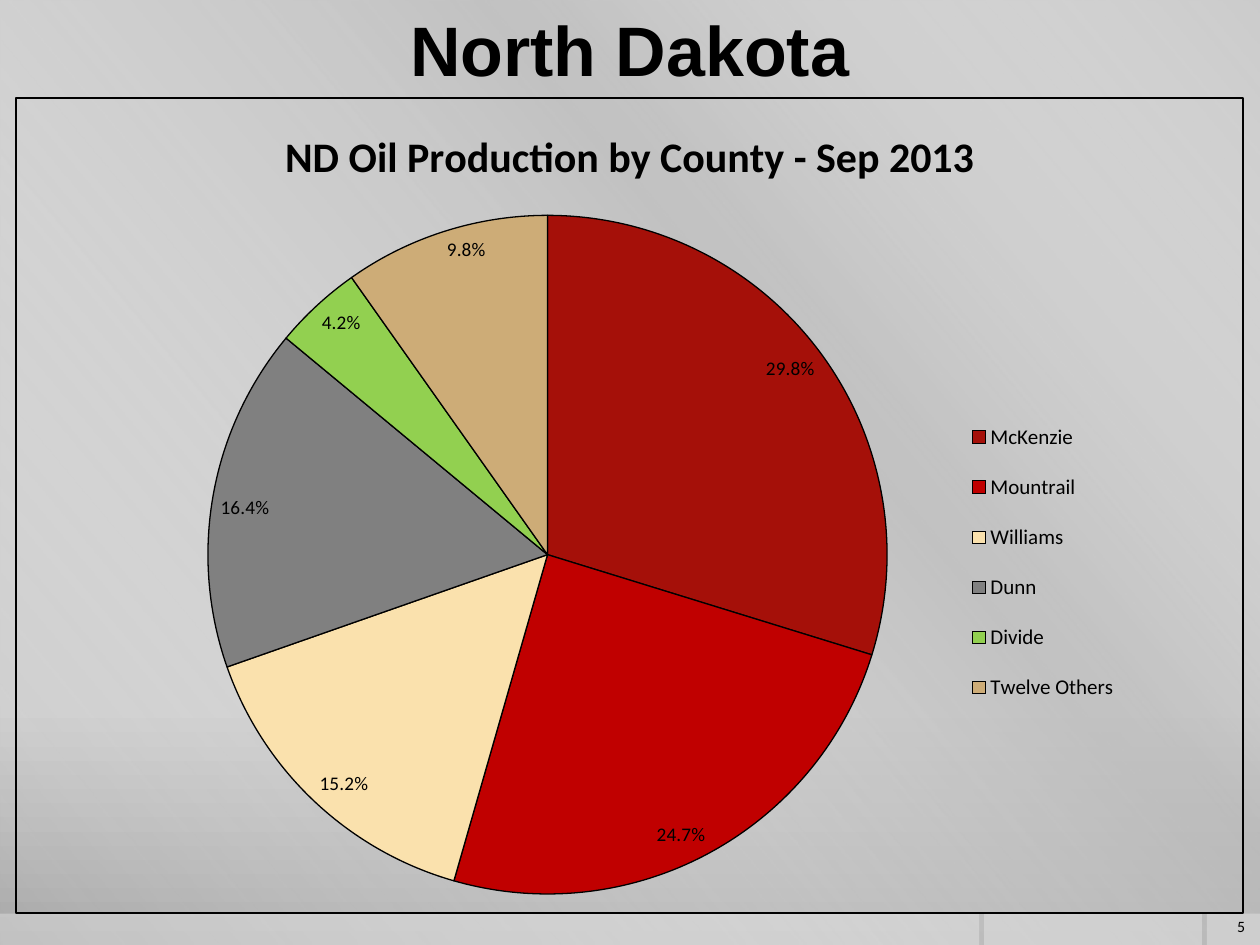
from lxml import etree
from pptx import Presentation
from pptx import util as u
from pptx.chart.data import CategoryChartData
from pptx.dml.color import RGBColor
from pptx.enum import chart as ch, shapes, text
from pptx.oxml import parse_xml
from pptx.oxml.ns import nsdecls, qn

HEAD = "North Dakota"
TITLE = "ND Oil Production by County - Sep 2013"
PAGE = "5"
COUNTIES = [  # name, share, colour
    ("McKenzie", 0.298, "A51009"),
    ("Mountrail", 0.247, "C00000"),
    ("Williams", 0.152, "FAE1AD"),
    ("Dunn", 0.164, "808080"),
    ("Divide", 0.042, "92D050"),
    ("Twelve Others", 0.098, "CDAC77"),
]
THEME = {
    "ink": "000000", "bar": "FFFFFF", "head": "Arial", "body": "Calibri",
    "sizes": {"head": 40, "title": 24, "legend": 12, "label": 11, "page": 9},
    # position, colour, opacity (all in percent)
    "back": (90, [(0, "CBCBCB", 100), (76, "C8C8C8", 100), (100, "A7A7A7", 100)]),
    "sheen": (140, [(0, "FFFFFF", 0), (34, "BFBFBF", 61),
                    (38, "BFBFBF", 76), (100, "FFFFFF", 0)]),
}
WIDE, HIGH = 25.4, 19.05
BAR_TOP = 18.42
BARS = [(0, 19.74), (19.84, 4.39), (24.33, 1.07)]  # left, width
PLOT = (0.156, 0.144, 0.554, 0.833)  # shares of the chart frame
LEGEND = (0.767, 0.37, 0.14, 0.4)


def rgb(code):
    return RGBColor.from_string(code)


def box(*sides):
    return [u.Cm(side) for side in sides]


def style(font, kind, bold=False):
    font.name = THEME["head" if kind == "head" else "body"]
    font.size = u.Pt(THEME["sizes"][kind])
    font.bold = bold
    font.color.rgb = rgb(THEME["ink"])


def blend(props, angle, stops):
    """Swap the solid fill in props for a gradient with opacity."""
    marks = "".join(
        f'<a:gs pos="{at * 1000}"><a:srgbClr val="{code}">'
        f'<a:alpha val="{seen * 1000}"/></a:srgbClr></a:gs>'
        for at, code, seen in stops)
    grad = parse_xml(f'<a:gradFill {nsdecls("a")} rotWithShape="1"><a:gsLst>{marks}'
                     f'</a:gsLst><a:lin ang="{angle * 60000}" scaled="0"/></a:gradFill>')
    props.replace(props.find(qn("a:solidFill")), grad)


def panel(slide, *sides):
    shape = slide.shapes.add_shape(shapes.MSO_SHAPE.RECTANGLE, *box(*sides))
    shape.shadow.inherit = False
    shape.line.fill.background()
    shape.fill.solid()
    shape.fill.fore_color.rgb = rgb(THEME["bar"])
    return shape


def write(shape, words, kind, align, bold=False):
    frame = shape.text_frame
    frame.text = words
    frame.vertical_anchor = text.MSO_ANCHOR.MIDDLE
    para = frame.paragraphs[0]
    para.alignment = align
    style(para.font, kind, bold)
    return frame


def place(holder, sides, inner=False):
    """Give a chart part a fixed place within the chart frame."""
    old = holder.find(qn("c:layout"))
    if old is not None:
        holder.remove(old)
    target = '<c:layoutTarget val="inner"/>' if inner else ""
    modes = '<c:xMode val="edge"/><c:yMode val="edge"/>'
    parts = "".join(f'<c:{k} val="{v}"/>' for k, v in zip("xywh", sides))
    layout = parse_xml(f'<c:layout {nsdecls("c")}><c:manualLayout>{target}{modes}'
                       f'{parts}</c:manualLayout></c:layout>')
    before = holder.find(qn("c:legendPos"))
    if before is None:
        holder.insert(0, layout)
    else:
        before.addnext(layout)


def backdrop(slide):
    fill = slide.background.fill
    fill.solid()
    fill.fore_color.rgb = rgb(THEME["bar"])
    blend(slide.element.find(".//" + qn("p:bgPr")), *THEME["back"])
    sheen = panel(slide, 0, 0, WIDE, HIGH)
    blend(sheen.element.spPr, *THEME["sheen"])
    for left, width in BARS:
        bar = panel(slide, left, BAR_TOP, width, HIGH - BAR_TOP)
        tint = bar.element.spPr.find(".//" + qn("a:srgbClr"))
        etree.SubElement(tint, qn("a:alpha"), val="30000")


def pie(slide):
    data = CategoryChartData(number_format="0.0%")
    data.categories = [name for name, _, _ in COUNTIES]
    data.add_series(TITLE, [share for _, share, _ in COUNTIES])
    chart = slide.shapes.add_chart(
        ch.XL_CHART_TYPE.PIE, *box(0.31, 1.96, 24.77, 16.46), data).chart
    style(chart.font, "label")
    frame = parse_xml(
        f'<c:spPr {nsdecls("c", "a")}><a:noFill/><a:ln w="12700"><a:solidFill>'
        f'<a:srgbClr val="{THEME["ink"]}"/></a:solidFill></a:ln></c:spPr>')
    chart.element.find(qn("c:chart")).addnext(frame)

    chart.has_title = True
    chart.chart_title.include_in_layout = False
    heading = chart.chart_title.text_frame
    heading.text = TITLE
    style(heading.paragraphs[0].font, "title", True)

    chart.has_legend = True
    legend = chart.legend
    legend.position = ch.XL_LEGEND_POSITION.RIGHT
    legend.include_in_layout = False
    style(legend.font, "legend")
    place(legend.element if hasattr(legend, "element") else legend._element, LEGEND)
    place(chart.element.find(".//" + qn("c:plotArea")), PLOT, True)

    plot = chart.plots[0]
    plot.vary_by_categories = True
    plot.has_data_labels = True
    labels = plot.data_labels
    labels.show_value = True
    labels.show_percentage = False
    labels.number_format = "0.0%"
    labels.number_format_is_linked = False
    labels.position = ch.XL_LABEL_POSITION.INSIDE_END
    style(labels.font, "label")
    for spot, (_, _, code) in enumerate(COUNTIES):
        slice_ = plot.series[0].points[spot].format
        slice_.fill.solid()
        slice_.fill.fore_color.rgb = rgb(code)
        slice_.line.color.rgb = rgb(THEME["ink"])
        slice_.line.width = u.Pt(0.75)


def main():
    deck = Presentation()
    deck.slide_width, deck.slide_height = box(WIDE, HIGH)
    slide = deck.slides.add_slide(deck.slide_layouts[5])
    backdrop(slide)

    page = slide.shapes.add_textbox(*box(24.28, 18.36, 1.07, 0.64))
    frame = write(page, PAGE, "page", text.PP_ALIGN.RIGHT)
    frame.word_wrap = True

    pie(slide)

    head = slide.shapes.title
    head.left, head.top, head.width, head.height = box(7.87, 0, 9.65, 1.96)
    frame = write(head, HEAD, "head", text.PP_ALIGN.CENTER, True)
    frame.word_wrap = False
    frame.auto_size = text.MSO_AUTO_SIZE.SHAPE_TO_FIT_TEXT
    slide.shapes.element.append(head.element) if hasattr(
        slide.shapes, "element") else slide.shapes._spTree.append(head.element)

    deck.save("out.pptx")


if __name__ == "__main__":
    main()
